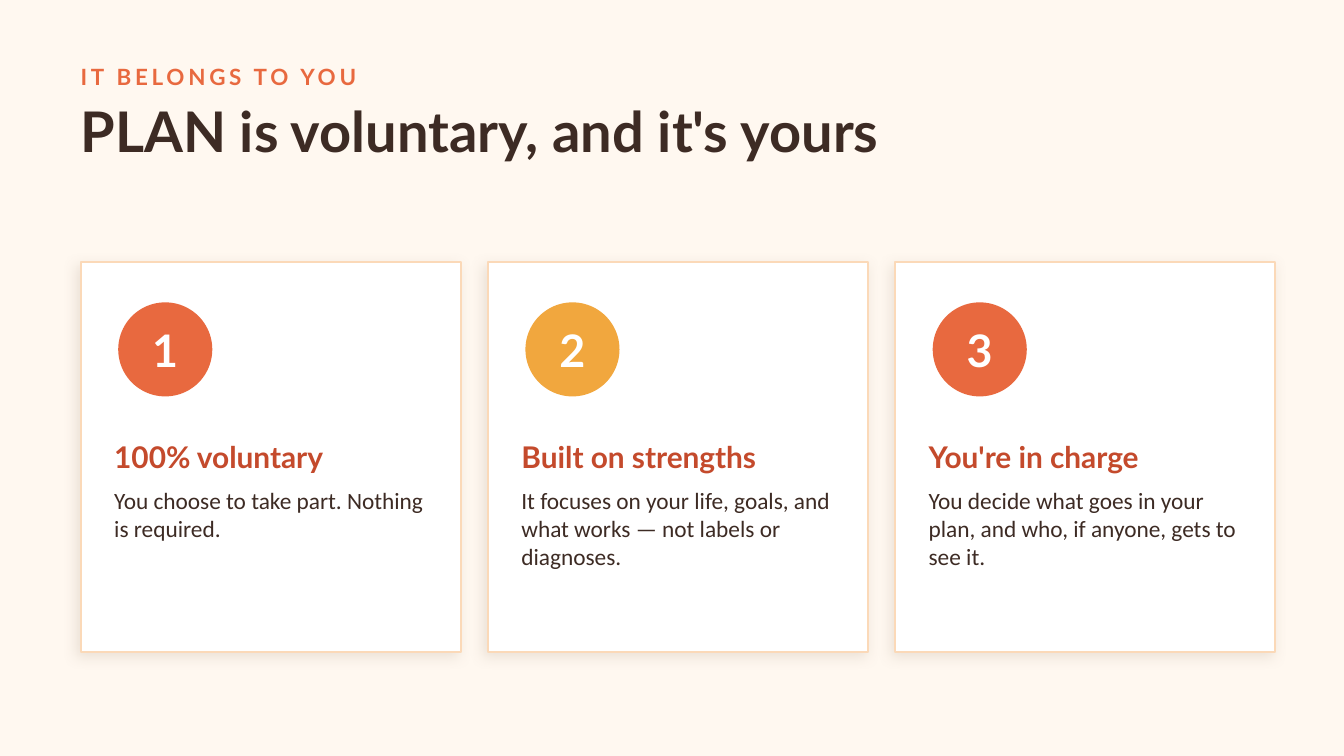
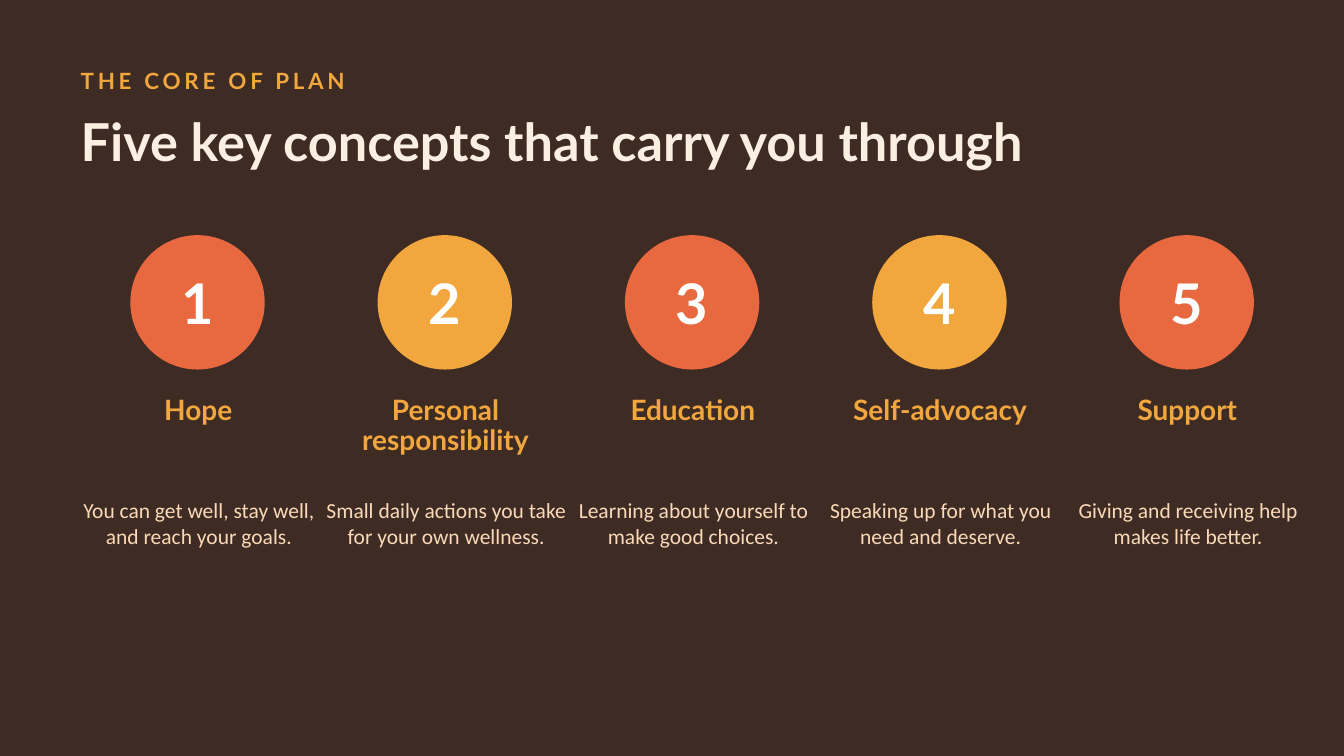
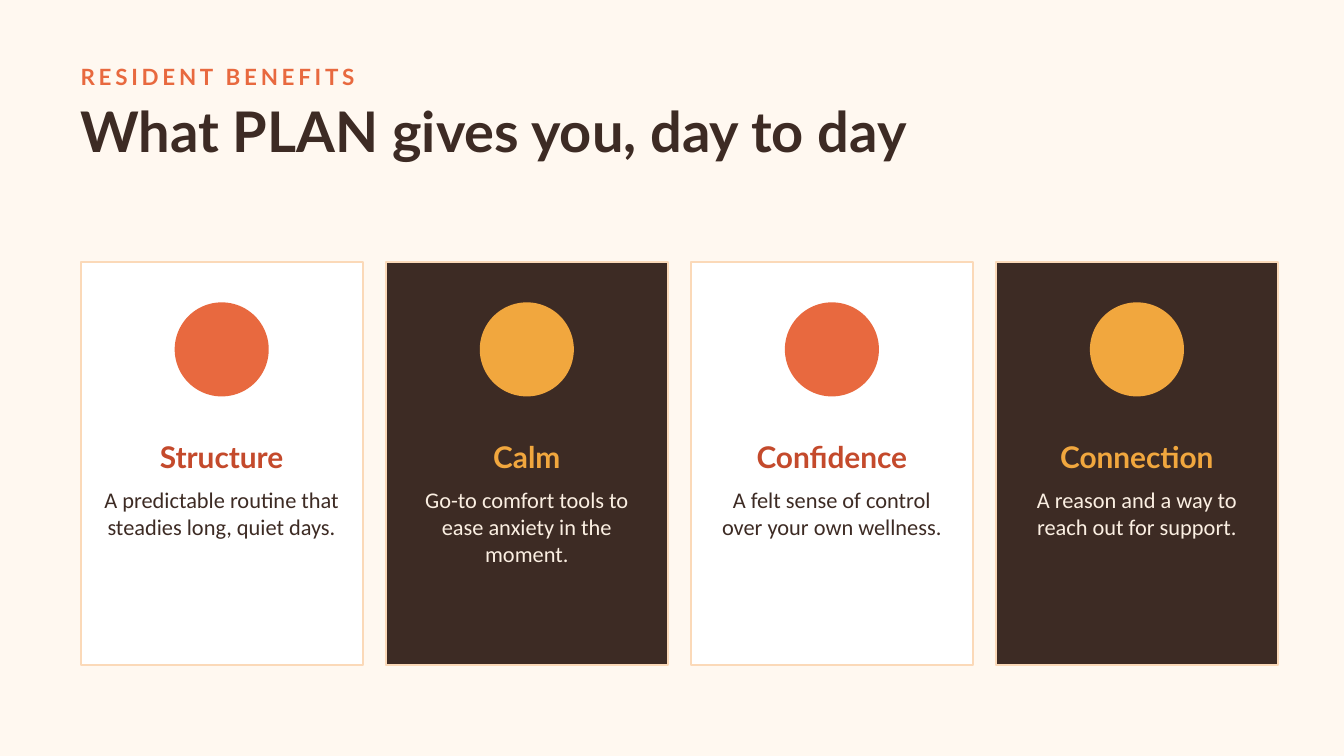
from dataclasses import dataclass

from lxml.etree import SubElement
from pptx import Presentation
from pptx.dml.color import RGBColor
from pptx.enum.shapes import MSO_SHAPE
from pptx.enum.text import MSO_ANCHOR, PP_ALIGN
from pptx.oxml.ns import qn
from pptx.util import Inches, Pt


@dataclass(frozen=True)
class Theme:
    heading_font: str = "Lato"
    body_font: str = "Calibri"
    cream: str = "FFF8F0"
    brown: str = "3D2B24"
    white: str = "FFFFFF"
    orange: str = "E8693F"
    amber: str = "F1A73E"
    rust: str = "C44A2C"
    peach: str = "FBD9B8"
    linen: str = "FBEFE2"
    shadow: str = "8A7059"
    kicker_size: float = 12
    title_size: float = 30
    dark_title_size: float = 28
    card_heading_size: float = 16
    card_number_size: float = 24
    principle_size: float = 12.5
    benefit_size: float = 12
    concept_number_size: float = 30
    concept_heading_size: float = 15
    concept_size: float = 11.5


THEME = Theme()
BADGE_COLORS = (THEME.orange, THEME.amber)
MARGIN = 0.6
CARD_TOP = 1.95
BADGE_TOP, BADGE_SIZE = 2.25, 0.7

PRINCIPLES = [
    ("100% voluntary", "You choose to take part. Nothing is required."),
    ("Built on strengths",
     "It focuses on your life, goals, and what works — not labels or diagnoses."),
    ("You're in charge",
     "You decide what goes in your plan, and who, if anyone, gets to see it."),
]
CONCEPTS = [
    ("Hope", "You can get well, stay well, and reach your goals."),
    ("Personal\nresponsibility", "Small daily actions you take for your own wellness."),
    ("Education", "Learning about yourself to make good choices."),
    ("Self-advocacy", "Speaking up for what you need and deserve."),
    ("Support", "Giving and receiving help makes life better."),
]
BENEFITS = [
    ("Structure", "A predictable routine that steadies long, quiet days."),
    ("Calm", "Go-to comfort tools to ease anxiety in the moment."),
    ("Confidence", "A felt sense of control over your own wellness."),
    ("Connection", "A reason and a way to reach out for support."),
]


def rgb(color):
    return RGBColor.from_string(color)


def write(shape, text, size, color, heading=True, align=PP_ALIGN.LEFT,
          middle=False, line_points=None, tracking=None):
    """Fill a shape with text; headings are bold and use the heading font."""
    frame = shape.text_frame
    frame.margin_left = frame.margin_top = frame.margin_right = frame.margin_bottom = 0
    frame.word_wrap = True
    frame.vertical_anchor = MSO_ANCHOR.MIDDLE if middle else MSO_ANCHOR.TOP
    frame.text = text
    for paragraph in frame.paragraphs:
        paragraph.alignment = align
        if line_points:
            paragraph.line_spacing = Pt(line_points)
        for run in paragraph.runs:
            run.font.name = THEME.heading_font if heading else THEME.body_font
            run.font.size = Pt(size)
            run.font.bold = heading
            run.font.color.rgb = rgb(color)
            if tracking:
                run._r.get_or_add_rPr().set("spc", str(tracking * 100))


def add_text(slide, box, text, size, color, **style):
    shape = slide.shapes.add_textbox(*map(Inches, box))
    write(shape, text, size, color, **style)


def add_filled(slide, kind, box, fill, line=None):
    shape = slide.shapes.add_shape(kind, *map(Inches, box))
    shape.shadow.inherit = False
    shape.fill.solid()
    shape.fill.fore_color.rgb = rgb(fill)
    if line:
        shape.line.color.rgb = rgb(line)
        shape.line.width = Pt(1)
    else:
        shape.line.fill.background()
    return shape


def add_badge(slide, left, top, diameter, index, number_size=None):
    """Draw a circle in alternating colours, numbered when a size is given."""
    badge = add_filled(slide, MSO_SHAPE.OVAL, (left, top, diameter, diameter),
                       BADGE_COLORS[index % 2])
    if number_size:
        write(badge, str(index + 1), number_size, THEME.white,
              align=PP_ALIGN.CENTER, middle=True)


def add_card(slide, left, width, height, fill):
    return add_filled(slide, MSO_SHAPE.RECTANGLE, (left, CARD_TOP, width, height),
                      fill, THEME.peach)


def add_soft_shadow(shape):
    effects = shape._element.spPr.find(qn("a:effectLst"))
    shadow = SubElement(effects, qn("a:outerShdw"), blurRad=str(Pt(7)), dist=str(Pt(3)),
                        dir=str(135 * 60000), algn="bl", rotWithShape="0")
    color = SubElement(shadow, qn("a:srgbClr"), val=THEME.shadow)
    SubElement(color, qn("a:alpha"), val="16000")


def add_slide(presentation, kicker, title, dark=False):
    slide = presentation.slides.add_slide(presentation.slide_layouts[6])
    slide.background.fill.solid()
    slide.background.fill.fore_color.rgb = rgb(THEME.brown if dark else THEME.cream)
    top = 0.45 if dark else 0.42
    add_text(slide, (MARGIN, top, 8.6, 0.3), kicker, THEME.kicker_size,
             THEME.amber if dark else THEME.orange, middle=True, tracking=2)
    add_text(slide, (MARGIN, top + 0.3, 9 if dark else 8.8, 0.6 if dark else 0.85), title,
             THEME.dark_title_size if dark else THEME.title_size,
             THEME.linen if dark else THEME.brown, middle=dark)
    return slide


def build_principles(presentation):
    slide = add_slide(presentation, "IT BELONGS TO YOU", "PLAN is voluntary, and it's yours")
    width, gap = 2.83, 0.2
    for index, (heading, body) in enumerate(PRINCIPLES):
        left = MARGIN + index * (width + gap)
        add_soft_shadow(add_card(slide, left, width, 2.9, THEME.white))
        add_badge(slide, left + 0.28, BADGE_TOP, BADGE_SIZE, index, THEME.card_number_size)
        add_text(slide, (left + 0.25, 3.15, 2.35, 0.5), heading,
                 THEME.card_heading_size, THEME.rust, middle=True)
        add_text(slide, (left + 0.25, 3.62, 2.4, 1.1), body,
                 THEME.principle_size, THEME.brown, heading=False)


def build_concepts(presentation):
    slide = add_slide(presentation, "THE CORE OF PLAN",
                      "Five key concepts that carry you through", dark=True)
    pitch, diameter = 1.84, 1
    for index, (heading, body) in enumerate(CONCEPTS):
        left = 0.97 + index * pitch
        add_badge(slide, left, 1.75, diameter, index, THEME.concept_number_size)
        add_text(slide, (left - 0.47, 2.95, 1.95, 0.7), heading, THEME.concept_heading_size,
                 THEME.amber, align=PP_ALIGN.CENTER, line_points=16)
        add_text(slide, (left - 0.44, 3.7, 1.9, 1.4), body, THEME.concept_size,
                 THEME.peach, heading=False, align=PP_ALIGN.CENTER)


def build_benefits(presentation):
    slide = add_slide(presentation, "RESIDENT BENEFITS", "What PLAN gives you, day to day")
    card_colors = ((THEME.white, THEME.rust, THEME.brown),
                   (THEME.brown, THEME.amber, THEME.linen))
    width, gap = 2.1, 0.17
    for index, (heading, body) in enumerate(BENEFITS):
        left = MARGIN + index * (width + gap)
        fill, heading_color, body_color = card_colors[index % 2]
        add_card(slide, left, width, 3, fill)
        add_badge(slide, left + (width - BADGE_SIZE) / 2, BADGE_TOP, BADGE_SIZE, index)
        add_text(slide, (left + 0.1, 3.15, width - 0.2, 0.5), heading,
                 THEME.card_heading_size, heading_color, align=PP_ALIGN.CENTER, middle=True)
        add_text(slide, (left + 0.15, 3.62, width - 0.3, 1.2), body,
                 THEME.benefit_size, body_color, heading=False, align=PP_ALIGN.CENTER)


def main():
    presentation = Presentation()
    presentation.slide_width = Inches(10)
    presentation.slide_height = Inches(10 * 9 / 16)
    build_principles(presentation)
    build_concepts(presentation)
    build_benefits(presentation)
    presentation.save("out.pptx")


if __name__ == "__main__":
    main()
